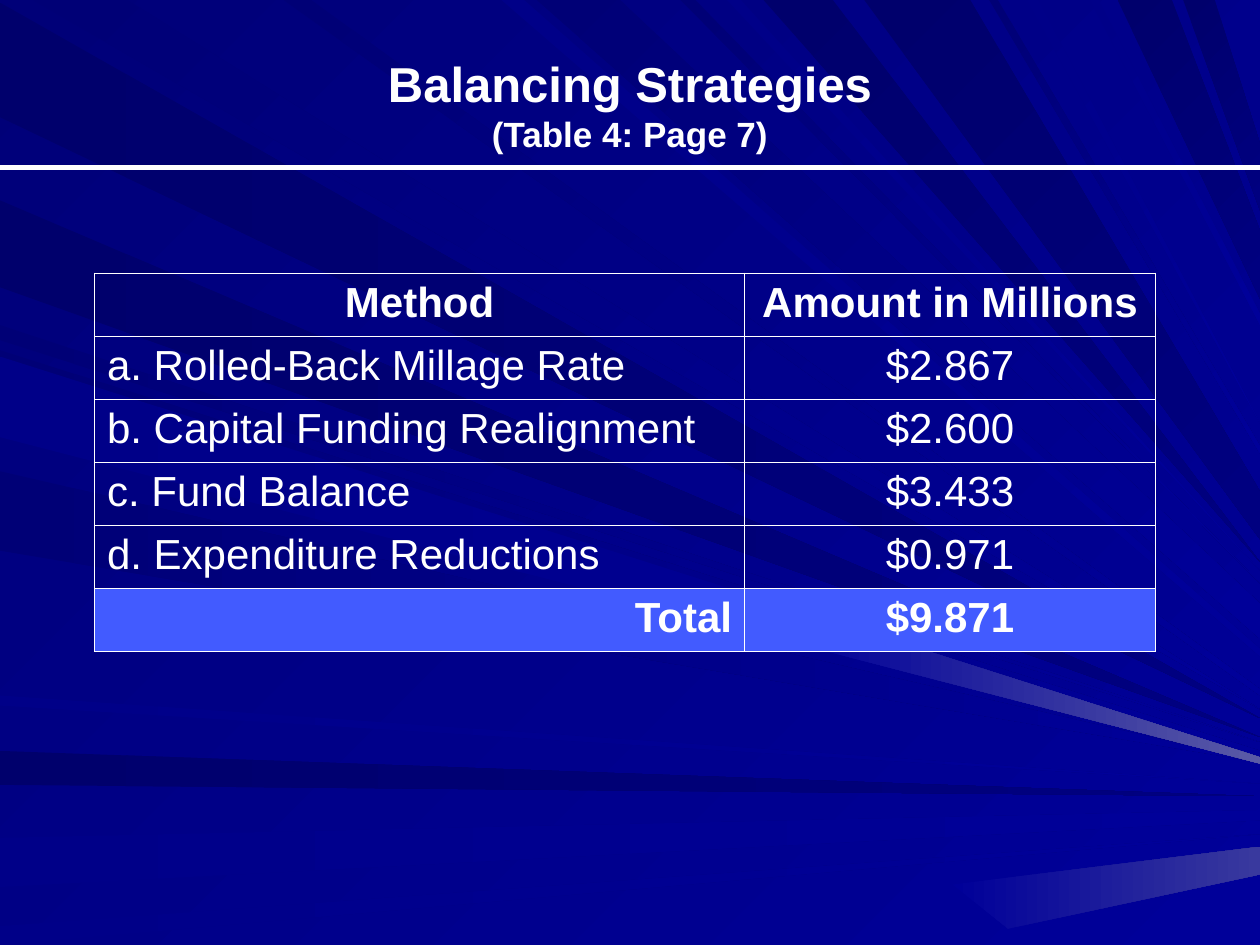
import pptx
import pptx.util
import pptx.dml.color
import pptx.enum.shapes
import pptx.enum.text
import pptx.oxml
import pptx.oxml.ns

Inches = pptx.util.Inches
Pt = pptx.util.Pt
RGBColor = pptx.dml.color.RGBColor
PP_ALIGN = pptx.enum.text.PP_ALIGN

WHITE = RGBColor.from_string("FFFFFF")
TOTAL_BLUE = RGBColor.from_string("425BFF")
BACK_DARK = RGBColor.from_string("000078")
DEEP = RGBColor.from_string("00006C")
DARK = RGBColor.from_string("000076")
MID = RGBColor.from_string("000088")
NAVY = RGBColor.from_string("000080")
BLUE = RGBColor.from_string("000099")
GLOW_LOW = RGBColor.from_string("39399E")
GLOW_HIGH = RGBColor.from_string("5A5AA6")

WIDTH, HEIGHT = 10, 7.5

# Beams run from the left or top edge to a tip on the right edge:
# (edge, start, end, height of the tip, thickness of the tip)
DEEP_BEAMS = [
    ("left", 0.02, 0.93, 5.7, 0),
    ("left", 5.96, 6.23, 6.32, 0),
    ("left", 1.59, 2.28, 5.85, 0),
    ("top", 6.06, 6.61, 4.46, 0),
    ("top", 8.87, 9.3, 1.83, 0.54),
    ("top", 9.39, 9.64, 1.14, 0.53),
    ("top", 6.86, 7.7, 3.9, 0.38),
]
DARK_BEAMS = [
    ("top", 0.26, 1.01, 5.63, 0),
    ("left", 2.58, 2.7, 5.89, 0),
    ("top", 4.26, 4.92, 4.79, 0.28),
    ("top", 5.4, 5.52, 4.63, 0),
    ("left", 2.78, 3.42, 5.96, 0.06),
    ("left", 3.74, 4.37, 6.05, 0),
    ("top", 2.25, 2.47, 5.47, 0.05),
    ("top", 7.85, 7.92, 3.54, 0.06),
]
MID_BEAMS = [
    ("left", 6.65, 7.04, 6.43, 0.08),
    ("left", 7.35, 7.5, 6.62, 0),
    ("top", 3.98, 4.16, 5.15, 0.06),
    ("left", 5.52, 5.6, 6.22, 0),
    ("top", 5.77, 5.88, 4.53, 0),
    ("top", 8.15, 8.24, 3.36, 0),
    ("top", 8.65, 8.72, 2.49, 0.09),
    ("left", 2.83, 3.47, 6.01, 0.05),
]
LOW_GLOW = [(10, 6.94), (10, 6.72), (7.56, 7.02), (8, 7.37)]
HIGH_GLOW = [(10, 6.01), (6.37, 4.85), (6.33, 5.11), (10, 6.06)]

STRATEGIES = [
    ("Method", "Amount in Millions"),
    ("a. Rolled-Back Millage Rate", "$2.867"),
    ("b. Capital Funding Realignment", "$2.600"),
    ("c. Fund Balance", "$3.433"),
    ("d. Expenditure Reductions", "$0.971"),
    ("Total", "$9.871"),
]


class Deck:
    """Holds the style and the current slide."""

    font = "Arial"
    ink = WHITE

    def __init__(self, prs):
        self.s = prs.slides.add_slide(prs.slide_layouts[6])

    def paint(self, fill, start, end, angle):
        fill.gradient()
        fill.gradient_angle = (360 - angle) % 360
        for stop, color in zip(fill.gradient_stops, (start, end)):
            stop.color.rgb = color

    def style(self, p, sizes, bold, align):
        p.alignment = align
        for r, size in zip(p.runs, sizes):
            r.font.name = self.font
            r.font.size = Pt(size)
            r.font.bold = bold
            r.font.color.rgb = self.ink

    def polygon(self, points, start, end, angle):
        corners = [(Inches(x), Inches(y)) for x, y in points]
        builder = self.s.shapes.build_freeform(*corners[0])
        builder.add_line_segments(corners[1:], close=True)
        sp = builder.convert_to_shape()
        sp.shadow.inherit = False
        sp.line.fill.background()
        self.paint(sp.fill, start, end, angle)

    def beam(self, edge, first, last, tip, thickness, start, end):
        upper, lower = (WIDTH, tip), (WIDTH, tip + thickness)
        if edge == "left":
            self.polygon([(0, first), upper, lower, (0, last)], start, end, 0)
        else:
            self.polygon([(last, 0), upper, lower, (first, 0)], start, end, 45)

    def title(self, text, sizes, x, y, w, h):
        sp = self.s.shapes.add_textbox(Inches(x), Inches(y), Inches(w), Inches(h))
        tf = sp.text_frame
        tf.word_wrap = True
        tf.vertical_anchor = pptx.enum.text.MSO_ANCHOR.MIDDLE
        p = tf.paragraphs[0]
        p.text = text
        self.style(p, sizes, True, PP_ALIGN.CENTER)

    def rule(self, y, width):
        sp = self.s.shapes.add_connector(
            pptx.enum.shapes.MSO_CONNECTOR.STRAIGHT,
            0, Inches(y), Inches(WIDTH), Inches(y))
        sp.line.color.rgb = self.ink
        sp.line.width = Pt(width)
        sp._element.spPr.append(pptx.oxml.parse_xml(
            "<a:effectLst %s/>" % pptx.oxml.ns.nsdecls("a")))

    def borders(self, cell, width):
        tc_pr = cell._tc.get_or_add_tcPr()
        for i, side in enumerate("LRTB"):
            tc_pr.insert(i, pptx.oxml.parse_xml(
                '<a:ln%s %s w="%d"><a:solidFill><a:srgbClr val="%s"/></a:solidFill></a:ln%s>'
                % (side, pptx.oxml.ns.nsdecls("a"), Pt(width), self.ink, side)))

    def table(self, rows, x, y, widths, row_height, size):
        last = len(rows) - 1
        frame = self.s.shapes.add_table(
            len(rows), len(widths), Inches(x), Inches(y),
            Inches(sum(widths)), Inches(row_height * len(rows)))
        table = frame.table
        table.first_row = table.horz_banding = False
        for column, width in zip(table.columns, widths):
            column.width = Inches(width)
        for i, row in enumerate(rows):
            table.rows[i].height = Inches(row_height)
            for j, text in enumerate(row):
                cell = table.cell(i, j)
                if i == last:
                    cell.fill.solid()
                    cell.fill.fore_color.rgb = TOTAL_BLUE
                else:
                    cell.fill.background()
                self.borders(cell, 1)
                align = PP_ALIGN.CENTER
                if j == 0 and i > 0:
                    align = PP_ALIGN.RIGHT if i == last else PP_ALIGN.LEFT
                p = cell.text_frame.paragraphs[0]
                p.text = text
                self.style(p, [size], i in (0, last), align)


def main():
    prs = pptx.Presentation()
    prs.slide_width, prs.slide_height = Inches(WIDTH), Inches(HEIGHT)
    deck = Deck(prs)

    # Background with light beams
    deck.paint(deck.s.background.fill, BACK_DARK, BLUE, 45)
    for beams, start, end in ((DEEP_BEAMS, DEEP, NAVY),
                              (DARK_BEAMS, DARK, BLUE),
                              (MID_BEAMS, MID, BLUE)):
        for beam in beams:
            deck.beam(*beam, start, end)
    deck.polygon(LOW_GLOW, BLUE, GLOW_LOW, 0)
    deck.polygon(HIGH_GLOW, BLUE, GLOW_HIGH, 0)

    # Heading
    deck.title("Balancing Strategies\v(Table 4: Page 7)", (28, 20), 0.5, 0.2, 9, 1.25)
    deck.rule(1.33, 3)

    # Strategies and their amounts
    deck.table(STRATEGIES, 0.75, 2.17, (5.16, 3.26), 0.47, 24)

    prs.save("out.pptx")


if __name__ == "__main__":
    main()
